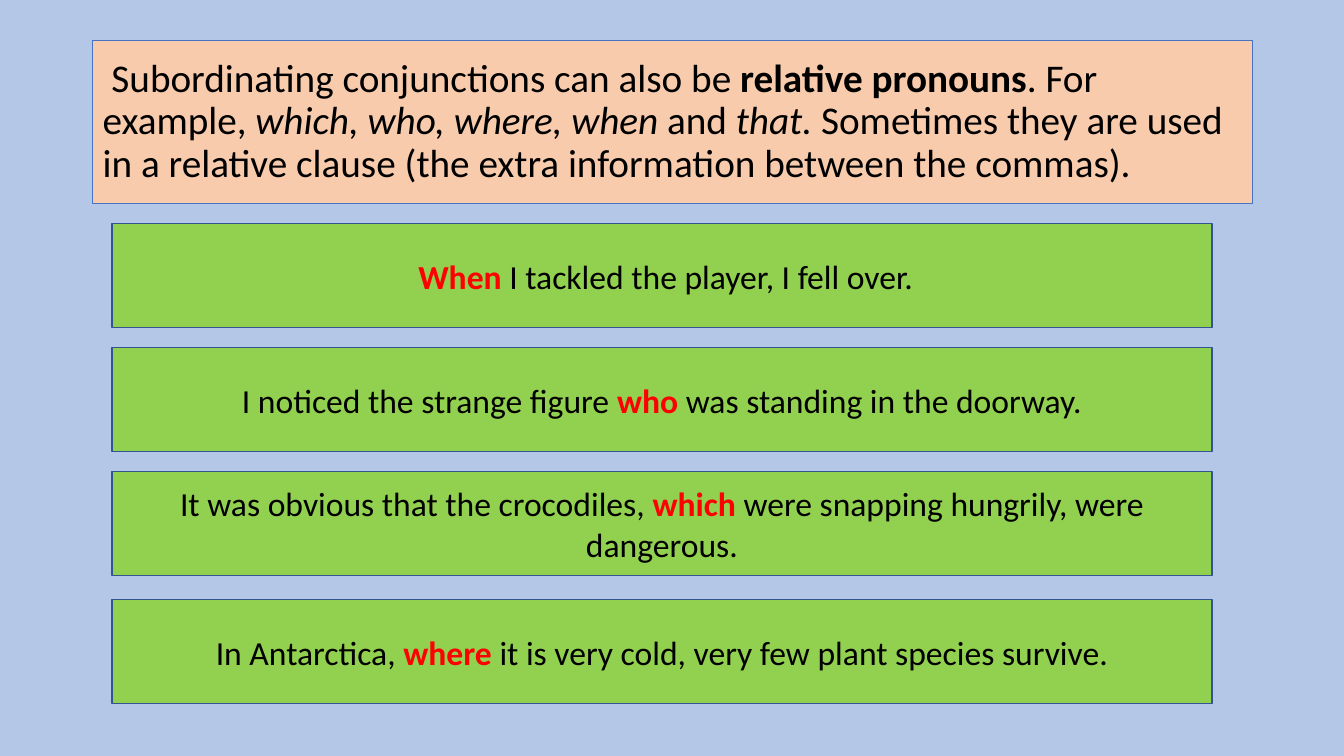
from pptx import Presentation
from pptx.dml.color import RGBColor
from pptx.enum.shapes import MSO_SHAPE
from pptx.enum.text import MSO_ANCHOR, PP_ALIGN
from pptx.util import Inches, Pt

RECT = MSO_SHAPE.RECTANGLE
MIDDLE = MSO_ANCHOR.MIDDLE
LEFT, CENTER = PP_ALIGN.LEFT, PP_ALIGN.CENTER

COLORS = {
    "background": "B4C7E7",
    "rule_fill": "F8CBAD",
    "rule_line": "4472C4",
    "example_fill": "92D050",
    "example_line": "325491",
    "text": "000000",
    "pronoun": "FF0000",
}

# Run formats
PLAIN = {"bold": False, "italic": False}
BOLD = {"bold": True, "italic": False}
ITALIC = {"bold": False, "italic": True}

RULE = [
    (" Subordinating conjunctions can also be ", PLAIN, "text"),
    ("relative pronouns", BOLD, "text"),
    (". For example, ", PLAIN, "text"),
    ("which, who, where, when ", ITALIC, "text"),
    ("and ", PLAIN, "text"),
    ("that. ", ITALIC, "text"),
    ("Sometimes they are used in a relative clause "
     "(the extra information between the commas).", PLAIN, "text"),
]

# Top, words before the pronoun, pronoun, words after it
EXAMPLES = [
    (2.22, " ", "When ", "I tackled the player, I fell over."),
    (3.45, "I noticed the strange figure ", "who ",
     "was standing in the doorway."),
    (4.68, "It was obvious that the crocodiles, ", "which",
     " were snapping hungrily, were dangerous."),
    (5.95, "In Antarctica, ", "where",
     " it is very cold, very few plant species survive."),
]


def rgb(name):
    return RGBColor.from_string(COLORS[name])


def add_box(s, box, style, line_width):
    sp = s.shapes.add_shape(RECT, *map(Inches, box))
    sp.shadow.inherit = False
    sp.fill.solid()
    sp.fill.fore_color.rgb = rgb(style + "_fill")
    sp.line.color.rgb = rgb(style + "_line")
    sp.line.width = Pt(line_width)
    return sp


def write_runs(sp, runs, size, align, line_spacing=1.0):
    tf = sp.text_frame
    tf.word_wrap = True
    tf.vertical_anchor = MIDDLE
    p = tf.paragraphs[0]
    p.alignment = align
    p.line_spacing = line_spacing
    for text, style, color in runs:
        r = p.add_run()
        r.text = text
        font = {"name": "Calibri", "size": Pt(size), **style}
        for key, value in font.items():
            setattr(r.font, key, value)
        r.font.color.rgb = rgb(color)


def add_example(s, top, before, pronoun, after):
    sp = add_box(s, (1.11, top, 10.91, 1.03), "example", 1)
    runs = [(before, PLAIN, "text"), (pronoun, BOLD, "pronoun"),
            (after, PLAIN, "text")]
    write_runs(sp, runs, 24, CENTER)


def main():
    prs = Presentation()
    prs.slide_width, prs.slide_height = Inches(13.33), Inches(7.5)
    s = prs.slides.add_slide(prs.slide_layouts[6])
    s.background.fill.solid()
    s.background.fill.fore_color.rgb = rgb("background")

    # Rule at the top
    sp = add_box(s, (0.92, 0.4, 11.5, 1.62), "rule", 0.75)
    write_runs(sp, RULE, 28, LEFT, 0.9)

    # Example sentences
    for example in EXAMPLES:
        add_example(s, *example)

    prs.save("out.pptx")


if __name__ == "__main__":
    main()
